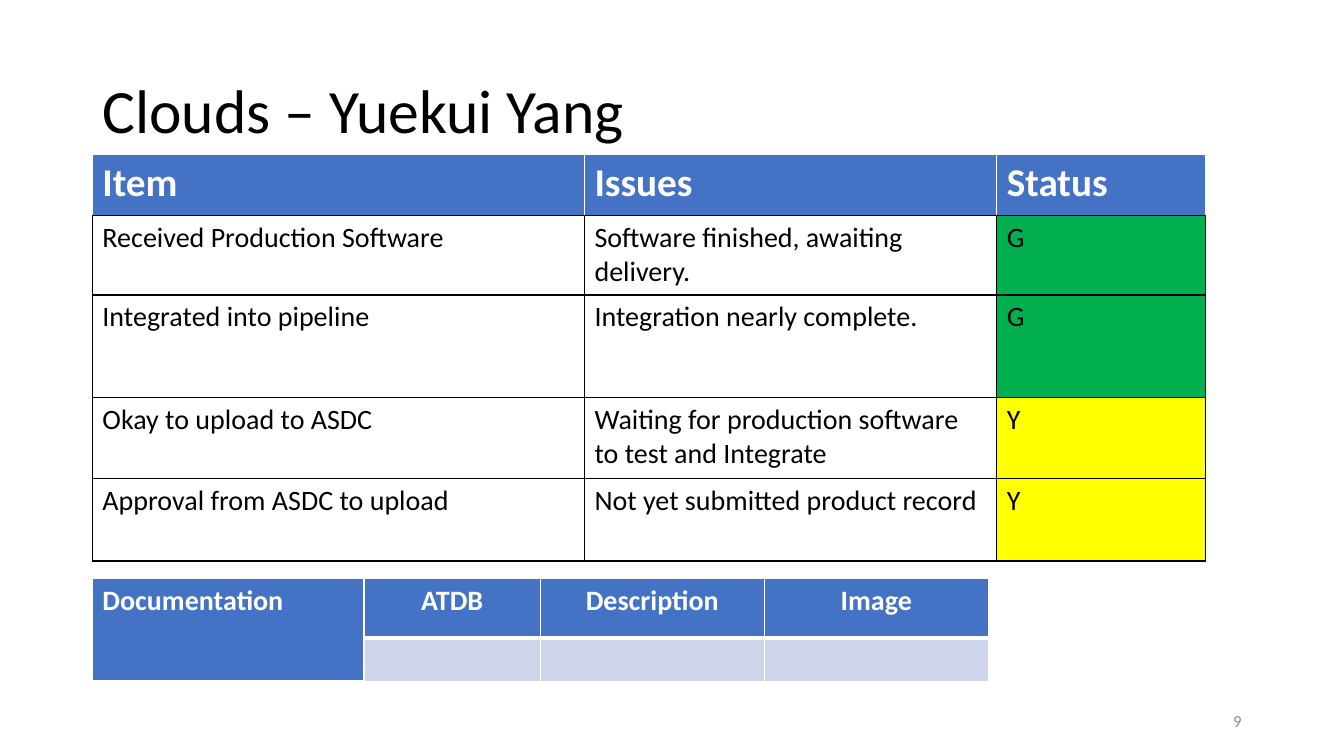
from lxml.etree import SubElement
from pptx import Presentation
from pptx.dml.color import RGBColor
from pptx.enum.text import MSO_ANCHOR as Anchor, PP_ALIGN as Align
from pptx.oxml.ns import qn
from pptx.util import Pt

COLORS = {"black": "000000", "white": "FFFFFF", "blue": "4472C4", "pale": "CFD5EA",
          "green": "00B050", "yellow": "FFFF00", "gray": "8C8C8C"}


def add_text(frame, text, size, color, bold=False, align=Align.LEFT):
    paragraph = frame.paragraphs[0]
    paragraph.alignment = align
    run = paragraph.add_run()
    run.text = text
    run.font.name = "Calibri"
    run.font.size = Pt(size)
    run.font.bold = bold
    run.font.color.rgb = RGBColor.from_string(COLORS[color])
    return paragraph


def style_cell(cell, fill, edge, bottom, bottom_width=1):
    """Borders go in before the fill, as the cell properties require."""
    properties = cell._tc.get_or_add_tcPr()
    for side in "LRTB":
        color, width = (bottom, bottom_width) if side == "B" else (edge, 1)
        line = SubElement(properties, qn(f"a:ln{side}"), w=str(Pt(width)))
        solid = SubElement(line, qn("a:solidFill"))
        SubElement(solid, qn("a:srgbClr"), val=COLORS[color])
    if fill:
        cell.fill.solid()
        cell.fill.fore_color.rgb = RGBColor.from_string(COLORS[fill])
    else:
        cell.fill.background()


deck = Presentation()
deck.slide_width, deck.slide_height = Pt(960), Pt(540)
slide = deck.slides.add_slide(deck.slide_layouts[5])

# Title
title = slide.shapes.title
title.left, title.top, title.width, title.height = Pt(66), Pt(28.75), Pt(828), Pt(104.4)
title.text_frame.vertical_anchor = Anchor.MIDDLE
heading = add_text(title.text_frame, "Clouds – Yuekui Yang", 44, "black")
heading.line_spacing = 0.9

# Slide number
number = slide.shapes.add_textbox(Pt(678), Pt(500.5), Pt(216), Pt(28.75)).text_frame
number.word_wrap = True
number.vertical_anchor = Anchor.MIDDLE
add_text(number, "9", 12, "gray", align=Align.RIGHT)

# Delivery status table
STATUS_FILLS = {"G": "green", "Y": "yellow"}
status_rows = [
    (44, "Item", "Issues", "Status"),
    (56.5, "Received Production Software", "Software finished, awaiting delivery.", "G"),
    (73.5, "Integrated into pipeline", "Integration nearly complete.", "G"),
    (57.5, "Okay to upload to ASDC", "Waiting for production software to test and Integrate", "Y"),
    (59, "Approval from ASDC to upload", "Not yet submitted product record", "Y"),
]
status = slide.shapes.add_table(5, 3, Pt(66), Pt(110.2), Pt(795), Pt(290.5)).table
status.horz_banding = status.first_row = False
for column, width in zip(status.columns, (351.5, 294.5, 149)):
    column.width = Pt(width)
for r, (height, *texts) in enumerate(status_rows):
    status.rows[r].height = Pt(height)
    for c, text in enumerate(texts):
        cell = status.cell(r, c)
        if r == 0:
            style_cell(cell, "blue", "white", "black")
            add_text(cell.text_frame, text, 28, "white", bold=True)
        else:
            style_cell(cell, STATUS_FILLS.get(text), "black", "black")
            add_text(cell.text_frame, text, 20, "black")

# Documentation table
documents = slide.shapes.add_table(2, 4, Pt(66), Pt(413.5), Pt(640), Pt(73)).table
documents.horz_banding = documents.first_row = False
for row, height in zip(documents.rows, (42, 31)):
    row.height = Pt(height)
columns = [("Documentation", 194), ("ATDB", 126), ("Description", 160), ("Image", 160)]
for c, (text, width) in enumerate(columns):
    documents.columns[c].width = Pt(width)
    top, below = documents.cell(0, c), documents.cell(1, c)
    style_cell(top, "blue", "white", "white", 3)
    style_cell(below, "pale" if c else "blue", "white", "white")
    add_text(top.text_frame, text, 20, "white", True, Align.CENTER if c else Align.LEFT)
documents.cell(0, 0).merge(documents.cell(1, 0))

deck.save("out.pptx")
